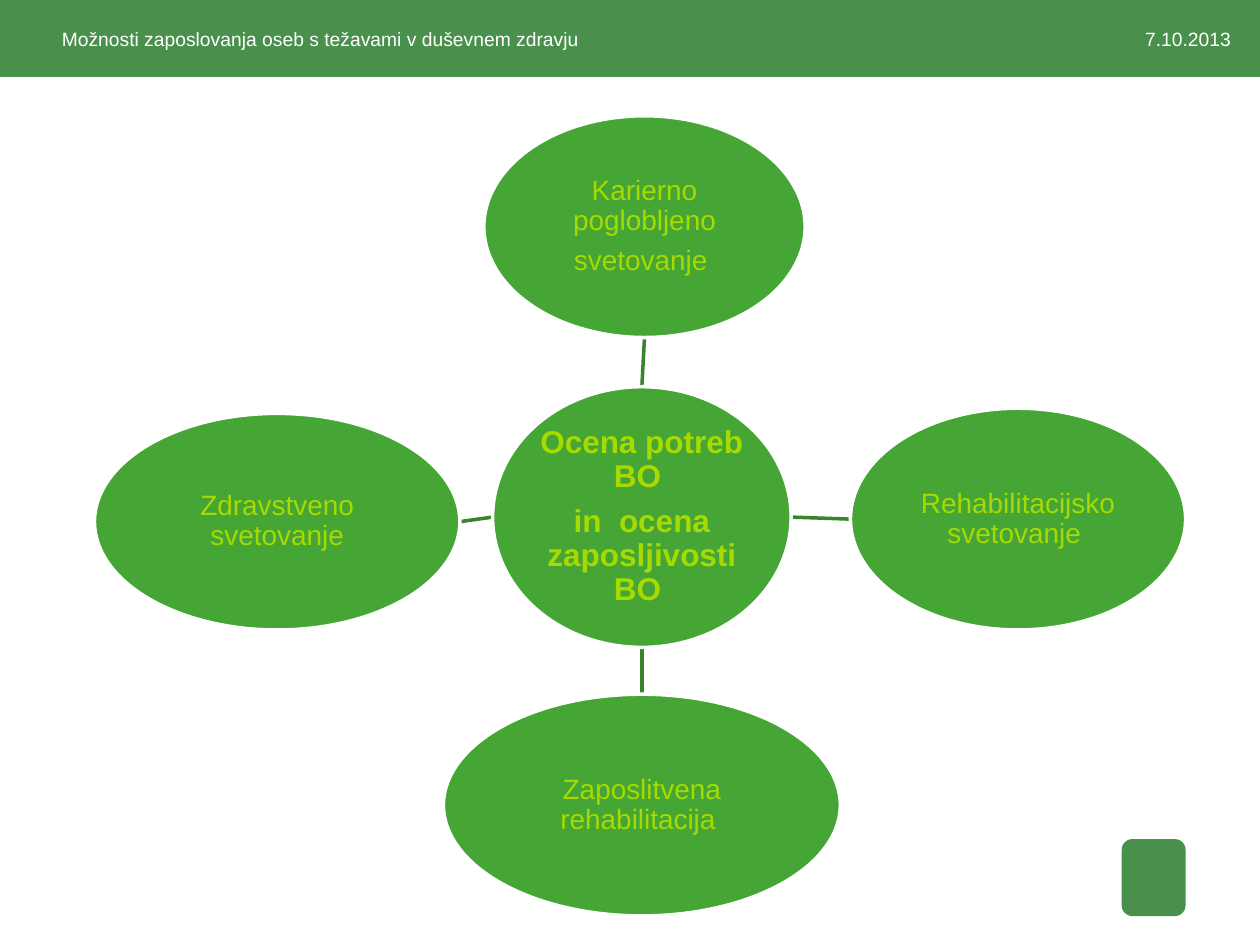
"""Build a slide with a hub oval linked to four counselling ovals."""
import lxml.etree
import pptx
import pptx.dml.color
import pptx.enum.shapes
import pptx.enum.text
import pptx.oxml.ns
import pptx.util

Pt = pptx.util.Pt
SHAPES = pptx.enum.shapes.MSO_SHAPE
ALIGN = pptx.enum.text.PP_ALIGN
ANCHOR = pptx.enum.text.MSO_ANCHOR

COLORS = {
    "band": "49904D",
    "oval": "45A535",
    "link": "37842A",
    "label": "A6DA00",
    "white": "FFFFFF",
}
HUB = (281.5, 221, 170.6, 149)
HUB_LABEL = ["Ocena potreb BO ", "in  ocena zaposljivosti BO "]
SATELLITES = [
    ("top", (276.5, 66.2, 183.6, 126.7), ["Karierno poglobljeno", "svetovanje "]),
    ("right", (486, 233.3, 191.5, 126.7), ["Rehabilitacijsko svetovanje "]),
    ("bottom", (253.4, 396.7, 226.8, 126.7), ["Zaposlitvena rehabilitacija "]),
    ("left", (54, 236.2, 208.8, 123.8), ["Zdravstveno svetovanje"]),
]
SIDES = {"top": (0.5, 0), "right": (1, 0.5), "bottom": (0.5, 1), "left": (0, 0.5)}
OPPOSITE = {"top": "bottom", "bottom": "top", "left": "right", "right": "left"}


def side_point(bounds, side):
    """Return the middle of one side of a bounding box."""
    left, top, width, height = bounds
    across, down = SIDES[side]
    return left + across * width, top + down * height


class SlideBuilder:
    """Hold the style and the current slide."""

    font = "Arial"

    def __init__(self, page):
        """Start building on a page."""
        self.page = page

    def color(self, name):
        """Return a palette colour."""
        return pptx.dml.color.RGBColor.from_string(COLORS[name])

    def shape(self, kind, bounds, fill):
        """Add a flat filled shape without an outline."""
        shape = self.page.shapes.add_shape(kind, *map(Pt, bounds))
        shape.shadow.inherit = False
        shape.fill.solid()
        shape.fill.fore_color.rgb = self.color(fill)
        shape.line.fill.background()
        return shape

    def label(self, shape, lines, size, color, align, anchor, inset=0, bold=False):
        """Fill a shape with styled paragraphs and return them."""
        frame = shape.text_frame
        frame.text = "\n".join(lines)
        frame.word_wrap = True
        frame.auto_size = pptx.enum.text.MSO_AUTO_SIZE.NONE
        frame.vertical_anchor = anchor
        frame.margin_left = frame.margin_right = Pt(inset)
        frame.margin_top = frame.margin_bottom = Pt(inset)
        for para in frame.paragraphs:
            para.alignment = align
            para.font.name = self.font
            para.font.size = Pt(size)
            para.font.bold = bold
            para.font.color.rgb = self.color(color)
        return frame.paragraphs

    def header(self, title, date):
        """Add the band with the title and the date."""
        band = self.shape(SHAPES.RECTANGLE, (0, 0, 720, 44), "band")
        title_box = self.page.shapes.title
        band.element.addnext(title_box.element)
        title_box.left, title_box.top = Pt(35.3), Pt(15.8)
        title_box.width, title_box.height = Pt(324.7), Pt(17.3)
        self.label(title_box, [title], 11, "white", ALIGN.LEFT, ANCHOR.TOP)
        date_box = self.page.shapes.add_textbox(Pt(535.7), Pt(15.8), Pt(167.8), Pt(21.6))
        self.label(date_box, [date], 11, "white", ALIGN.RIGHT, ANCHOR.TOP)

    def oval(self, bounds, lines, size, bold=False):
        """Add a labelled oval with a white outline."""
        oval = self.shape(SHAPES.OVAL, bounds, "oval")
        oval.line.color.rgb = self.color("white")
        oval.line.width = Pt(2)
        for para in self.label(oval, lines, size, "label", ALIGN.CENTER,
                               ANCHOR.MIDDLE, 0.8, bold):
            para.line_spacing = 0.9
            para.space_after = Pt(0.35 * size)

    def link(self, start, end):
        """Add a straight connector between two points."""
        line = self.page.shapes.add_connector(
            pptx.enum.shapes.MSO_CONNECTOR.STRAIGHT, *map(Pt, start + end))
        line.line.color.rgb = self.color("link")
        line.line.width = Pt(2)
        properties = line.element.find(pptx.oxml.ns.qn("p:spPr"))
        lxml.etree.SubElement(properties, pptx.oxml.ns.qn("a:effectLst"))


def main():
    """Build and save the deck."""
    deck = pptx.Presentation()
    deck.slide_width, deck.slide_height = Pt(720), Pt(540)
    builder = SlideBuilder(deck.slides.add_slide(deck.slide_layouts[5]))
    builder.header("Možnosti zaposlovanja oseb s težavami v duševnem zdravju", "7.10.2013")
    builder.shape(SHAPES.ROUNDED_RECTANGLE, (641, 479.5, 36.5, 44), "band")
    for side, bounds, lines in SATELLITES:
        builder.link(side_point(HUB, side), side_point(bounds, OPPOSITE[side]))
        builder.oval(bounds, lines, 16)
    builder.oval(HUB, HUB_LABEL, 18, bold=True)
    deck.save("out.pptx")


if __name__ == "__main__":
    main()
